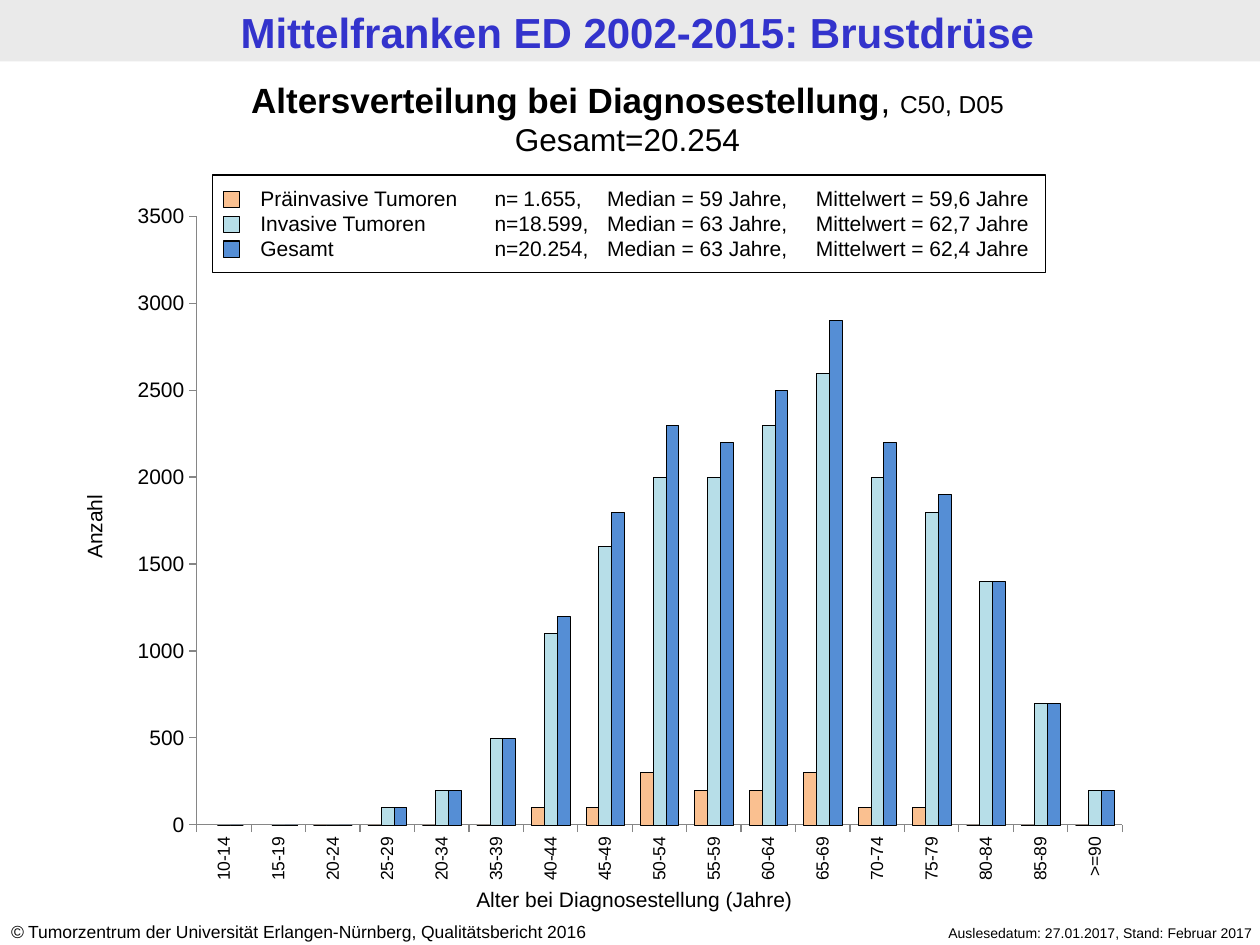
from lxml import etree
from pptx import Presentation
from pptx import util as u
from pptx.chart.data import CategoryChartData
from pptx.dml.color import RGBColor
from pptx.enum import chart as charts, shapes, text
from pptx.oxml import parse_xml
from pptx.oxml.ns import nsdecls, qn

BLACK = RGBColor(0x00, 0x00, 0x00)
WHITE = RGBColor(0xFF, 0xFF, 0xFF)
BAND = RGBColor(0xEA, 0xEA, 0xEA)
TITLE_BLUE = RGBColor(0x33, 0x33, 0xCC)
AXIS_GREY = RGBColor(0x86, 0x86, 0x86)
ORANGE = RGBColor(0xFA, 0xC0, 0x90)
AQUA = RGBColor(0xB7, 0xDE, 0xE8)
BLUE = RGBColor(0x55, 0x8E, 0xD5)

LEFT, CENTER, RIGHT = text.PP_ALIGN.LEFT, text.PP_ALIGN.CENTER, text.PP_ALIGN.RIGHT

AGES = ["10-14", "15-19", "20-24", "25-29", "20-34", "35-39", "40-44", "45-49",
        "50-54", "55-59", "60-64", "65-69", "70-74", "75-79", "80-84", "85-89", ">=90"]
SERIES = [
    ("Präinvasive Tumoren", ORANGE,
     [None, None, 0, 0, 0, 0, 100, 100, 300, 200, 200, 300, 100, 100, 0, 0, 0]),
    ("Invasive Tumoren", AQUA,
     [0, 0, 0, 100, 200, 500, 1100, 1600, 2000, 2000, 2300, 2600, 2000, 1800, 1400, 700, 200]),
    ("Gesamt", BLUE,
     [0, 0, 0, 100, 200, 500, 1200, 1800, 2300, 2200, 2500, 2900, 2200, 1900, 1400, 700, 200]),
]
LEGEND = [
    "Präinvasive Tumoren\tn=\t1.655,\tMedian = 59 Jahre,\tMittelwert = 59,6 Jahre",
    "Invasive Tumoren \t\tn=18.599,\tMedian = 63 Jahre,\tMittelwert = 62,7 Jahre",
    "Gesamt\t\tn=20.254,\tMedian = 63 Jahre,\tMittelwert = 62,4 Jahre",
]
LEGEND_TABS = [(3.73, "l"), (4.72, "l"), (6.48, "r"), (6.99, "l"), (11.2, "l")]


class Painter:
    """Holds the style and the current page; lengths are in centimetres."""

    font = "Arial"

    def __init__(self, page):
        self.page = page

    def rect(self, left, top, width, height, fill=None, line=None):
        shape = self.page.shapes.add_shape(
            shapes.MSO_SHAPE.RECTANGLE, u.Cm(left), u.Cm(top), u.Cm(width), u.Cm(height))
        shape.shadow.inherit = False
        if fill is None:
            shape.fill.background()
        else:
            shape.fill.solid()
            shape.fill.fore_color.rgb = fill
        if line is None:
            shape.line.fill.background()
        else:
            shape.line.color.rgb = line
            shape.line.width = u.Pt(0.75)

    def text(self, left, top, width, height, paras, align=LEFT, color=BLACK,
             tabs=(), rotation=0, anchor=text.MSO_ANCHOR.TOP):
        """Each paragraph is a list of (words, size, style); style holds b and/or i."""
        box = self.page.shapes.add_textbox(u.Cm(left), u.Cm(top), u.Cm(width), u.Cm(height))
        box.rotation = rotation
        frame = box.text_frame
        frame.word_wrap = True
        frame.vertical_anchor = anchor
        for index, spans in enumerate(paras):
            para = frame.add_paragraph() if index else frame.paragraphs[0]
            para.alignment = align
            if tabs:
                stops = etree.SubElement(para._p.get_or_add_pPr(), qn("a:tabLst"))
                for position, kind in tabs:
                    etree.SubElement(stops, qn("a:tab"), pos=str(u.Cm(position)), algn=kind)
            for words, size, style in spans:
                span = para.add_run()
                span.text = words
                span.font.name = self.font
                span.font.size = u.Pt(size)
                span.font.color.rgb = color
                span.font.bold = "b" in style
                span.font.italic = "i" in style

    def axis(self, axis, size):
        axis.has_major_gridlines = False
        axis.major_tick_mark = charts.XL_TICK_MARK.OUTSIDE
        axis.format.line.color.rgb = AXIS_GREY
        axis.format.line.width = u.Pt(0.75)
        font = axis.tick_labels.font
        font.name, font.size = self.font, u.Pt(size)
        font.color.rgb = BLACK

    def columns(self, left, top, width, height, categories, series):
        data = CategoryChartData()
        data.categories = categories
        for name, _, values in series:
            data.add_series(name, values)
        chart = self.page.shapes.add_chart(
            charts.XL_CHART_TYPE.COLUMN_CLUSTERED, u.Cm(left), u.Cm(top),
            u.Cm(width), u.Cm(height), data).chart
        chart.has_legend = chart.has_title = False
        chart.font.name, chart.font.size = "Calibri", u.Pt(18)
        chart.font.color.rgb = BLACK

        plot = chart.plots[0]
        plot.gap_width, plot.overlap = 124, 0
        plot.vary_by_categories = False
        for bars, (_, color, _) in zip(plot.series, series):
            bars.format.fill.solid()
            bars.format.fill.fore_color.rgb = color
            bars.format.line.color.rgb = BLACK
            bars.format.line.width = u.Pt(0.25)

        self.axis(chart.category_axis, 10)
        self.axis(chart.value_axis, 12)
        chart.category_axis._element.find(".//" + qn("a:bodyPr")).set("rot", "-5400000")
        chart.value_axis.minimum_scale, chart.value_axis.maximum_scale = 0, 3500
        chart.value_axis.major_unit = 500

        # Fixed plot area on white
        area = chart._chartSpace.chart.plotArea
        for old in area.findall(qn("c:layout")):
            area.remove(old)
        sizes = "".join(f'<c:{tag} val="{value}"/>' for tag, value in
                        (("x", 0.08), ("y", 0.03), ("w", 0.9), ("h", 0.87)))
        area.insert(0, parse_xml(
            f'<c:layout {nsdecls("c")}><c:manualLayout><c:layoutTarget val="inner"/>'
            f'<c:xMode val="edge"/><c:yMode val="edge"/>{sizes}</c:manualLayout></c:layout>'))
        area.append(parse_xml(
            f'<c:spPr {nsdecls("c", "a")}><a:solidFill><a:srgbClr val="{WHITE}"/>'
            '</a:solidFill><a:ln><a:noFill/></a:ln></c:spPr>'))


def main():
    deck = Presentation()
    deck.slide_width, deck.slide_height = u.Cm(25.4), u.Cm(19.05)
    painter = Painter(deck.slides.add_slide(deck.slide_layouts[6]))

    # Title band and footer
    painter.rect(0, 0, 25.4, 1.24, fill=BAND)
    painter.text(0.15, 0.03, 25.4, 1.24,
                 [[("Mittelfranken ED 2002-2015: Brustdrüse", 24, "b")]],
                 CENTER, TITLE_BLUE, anchor=text.MSO_ANCHOR.BOTTOM)
    painter.text(-0.03, 18.44, 13.31, 0.69, [[
        ("©", 10, "i"),
        (" Tumorzentrum der Universität Erlangen-Nürnberg, Qualitätsbericht 2016", 10, "")]])
    painter.text(16.89, 18.52, 8.61, 0.61,
                 [[("Auslesedatum: 27.01.2017, Stand: Februar 2017", 8, "")]], RIGHT)

    # Heading
    painter.text(-0.1, 1.45, 25.5, 1.88, [
        [("Altersverteilung bei Diagnosestellung", 20, "b"), (", ", 20, ""), ("C50, D05", 14, "")],
        [("Gesamt=20.254", 18, "")]], CENTER)

    # Chart with axis titles
    painter.columns(2.31, 3.94, 20.73, 14.1, AGES, SERIES)
    painter.text(8.89, 17.75, 7.8, 0.76,
                 [[("Alter bei Diagnosestellung (Jahre)", 12, "")]], CENTER)
    painter.text(-1.42, 10.24, 6.63, 0.76, [[("Anzahl", 12, "")]], CENTER, rotation=270)

    # Legend
    painter.text(5, 3.61, 16.31, 1.8, [[(line, 12, "")] for line in LEGEND], tabs=LEGEND_TABS)
    painter.rect(4.29, 3.53, 16.79, 1.96, line=BLACK)
    for row, (_, color, _) in enumerate(SERIES):
        painter.rect(4.5, 3.86 + row * 0.5, 0.33, 0.33, fill=color, line=BLACK)

    deck.save("out.pptx")


if __name__ == "__main__":
    main()
